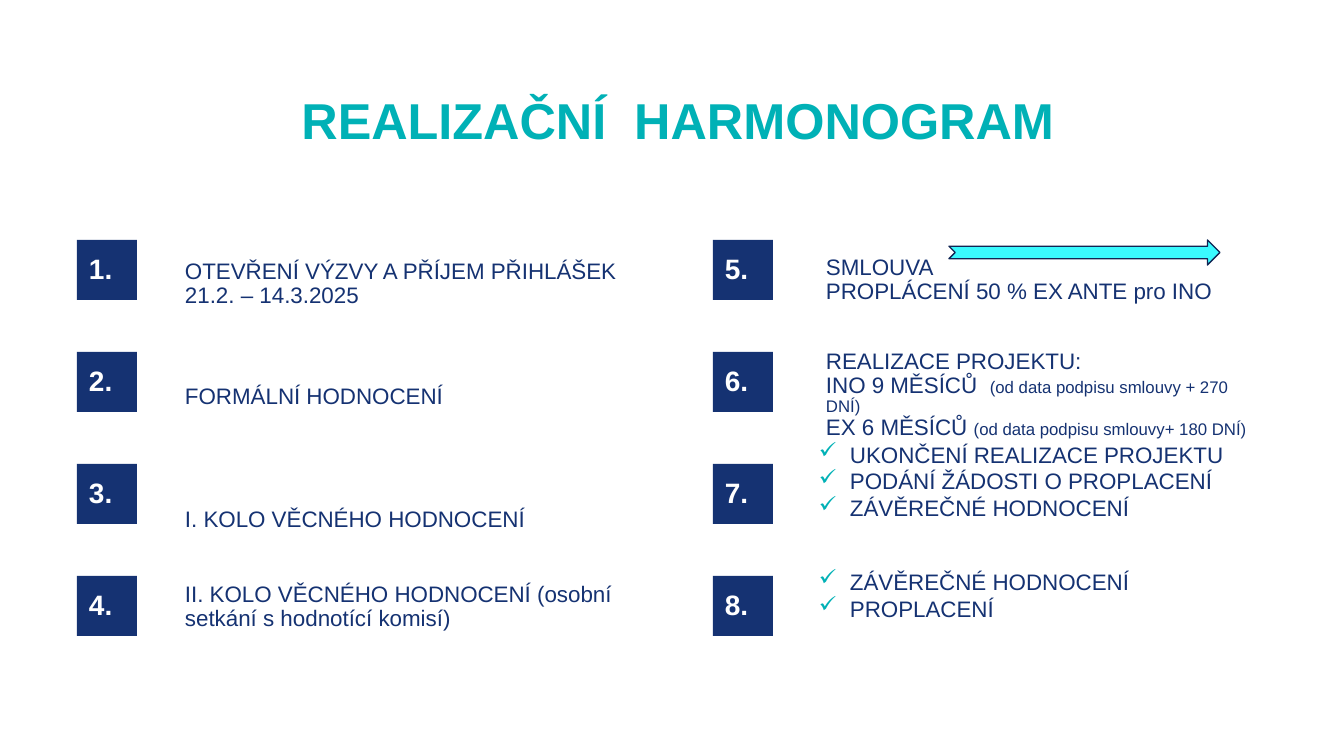
from dataclasses import dataclass

from lxml.etree import SubElement
from pptx import Presentation
from pptx.dml.color import RGBColor
from pptx.enum.shapes import MSO_SHAPE as Shape
from pptx.enum.text import MSO_ANCHOR as Anchor, PP_ALIGN as Align
from pptx.oxml.ns import qn
from pptx.util import Pt


@dataclass(frozen=True)
class Theme:
    font: str = "Arial"
    navy: str = "153272"
    teal: str = "00B1B6"
    white: str = "FFFFFF"
    arrow: str = "3AFAFF"
    outline: str = "102554"
    title: int = 36
    number: int = 20
    body: int = 16
    small: int = 12


THEME = Theme()

# Content: each step holds (vertical centre of its text, paragraphs, bulleted);
# a paragraph is a list of (text, size) runs
TITLE = "REALIZAČNÍ  HARMONOGRAM"
BODY, SMALL = THEME.body, THEME.small
COLUMNS = [
    [
        (284, [[("OTEVŘENÍ VÝZVY A PŘÍJEM PŘIHLÁŠEK 21.2. – 14.3.2025", BODY)]], False),
        (397, [[("FORMÁLNÍ HODNOCENÍ", BODY)]], False),
        (520, [[("I. KOLO VĚCNÉHO HODNOCENÍ", BODY)]], False),
        (607, [[("II. KOLO VĚCNÉHO HODNOCENÍ (osobní setkání s hodnotící komisí)", BODY)]], False),
    ],
    [
        (280, [[("SMLOUVA", BODY)], [("PROPLÁCENÍ 50 % EX ANTE pro INO", BODY)]], False),
        (395, [
            [("REALIZACE PROJEKTU:", BODY)],
            [("INO 9 MĚSÍCŮ  ", BODY), ("(od data podpisu smlouvy + 270 DNÍ)", SMALL)],
            [("EX 6 MĚSÍCŮ ", BODY), ("(od data podpisu smlouvy+ 180 DNÍ)", SMALL)],
        ], False),
        (481, [
            [("UKONČENÍ REALIZACE PROJEKTU", BODY)],
            [("PODÁNÍ ŽÁDOSTI O PROPLACENÍ", BODY)],
            [("ZÁVĚREČNÉ HODNOCENÍ", BODY)],
        ], True),
        (595, [[("ZÁVĚREČNÉ HODNOCENÍ", BODY)], [("PROPLACENÍ", BODY)]], True),
    ],
]

# Layout in px
SQUARE, ROW_TOP, ROW_PITCH = 60, 240, 112
SQUARE_LEFT = [77, 713]
TEXT_LEFT, TEXT_WIDTH = [175, 816], [457, 444]
BULLET_LEFT, BULLET_WIDTH = 793, 474
BULLET_MARGIN, BULLET_INDENT = 47, 31
TEXT_HEIGHT, INSET = 88, 10


def px(length):
    return round(length * 914400 / 100.8)


def add_bullet(paragraph):
    properties = paragraph._p.get_or_add_pPr()
    properties.set("marL", str(px(BULLET_MARGIN)))
    properties.set("indent", str(-px(BULLET_INDENT)))
    color = SubElement(properties, qn("a:buClr"))
    SubElement(color, qn("a:srgbClr")).set("val", THEME.teal)
    SubElement(properties, qn("a:buChar")).set("char", "✓")


def write(shape, paragraphs, *, color=THEME.navy, bold=False, align=Align.LEFT,
          left_inset=INSET, bulleted=False):
    frame = shape.text_frame
    frame.word_wrap = True
    frame.vertical_anchor = Anchor.MIDDLE
    frame.margin_left, frame.margin_right = px(left_inset), px(INSET)
    frame.margin_top = frame.margin_bottom = 0
    for index, runs in enumerate(paragraphs):
        paragraph = frame.add_paragraph() if index else frame.paragraphs[0]
        paragraph.alignment = align
        paragraph.line_spacing = 1.0 if bulleted else 0.9
        if bulleted:
            add_bullet(paragraph)
        for text, size in runs:
            run = paragraph.add_run()
            run.text = text
            run.font.name = THEME.font
            run.font.size = Pt(size)
            run.font.bold = bold
            run.font.color.rgb = RGBColor.from_string(color)


def add_box(slide, left, top, width, height):
    return slide.shapes.add_textbox(px(left), px(top), px(width), px(height))


def add_filled(slide, kind, left, top, width, height, fill):
    shape = slide.shapes.add_shape(kind, px(left), px(top), px(width), px(height))
    shape.shadow.inherit = False
    shape.fill.solid()
    shape.fill.fore_color.rgb = RGBColor.from_string(fill)
    shape.line.fill.background()
    return shape


def main():
    presentation = Presentation()
    presentation.slide_width, presentation.slide_height = px(1344), px(756)
    slide = presentation.slides.add_slide(presentation.slide_layouts[6])

    # Title
    write(add_box(slide, 83, 83, 1190, 80), [[(TITLE, THEME.title)]],
          color=THEME.teal, bold=True, align=Align.CENTER)

    # Numbered steps in two columns
    for column, steps in enumerate(COLUMNS):
        for row, (center, paragraphs, bulleted) in enumerate(steps):
            number = column * len(steps) + row + 1
            square = add_filled(slide, Shape.RECTANGLE, SQUARE_LEFT[column],
                                ROW_TOP + row * ROW_PITCH, SQUARE, SQUARE, THEME.navy)
            write(square, [[(f"{number}.", THEME.number)]],
                  color=THEME.white, bold=True, left_inset=12)
            left = BULLET_LEFT if bulleted else TEXT_LEFT[column]
            width = BULLET_WIDTH if bulleted else TEXT_WIDTH[column]
            box = add_box(slide, left, center - TEXT_HEIGHT / 2, width, TEXT_HEIGHT)
            write(box, paragraphs, bulleted=bulleted)

    # Arrow beside the contract step
    arrow = add_filled(slide, Shape.NOTCHED_RIGHT_ARROW, 949, 240, 271, 25, THEME.arrow)
    arrow.line.color.rgb = RGBColor.from_string(THEME.outline)
    arrow.line.width = Pt(1)

    presentation.save("out.pptx")


if __name__ == "__main__":
    main()
